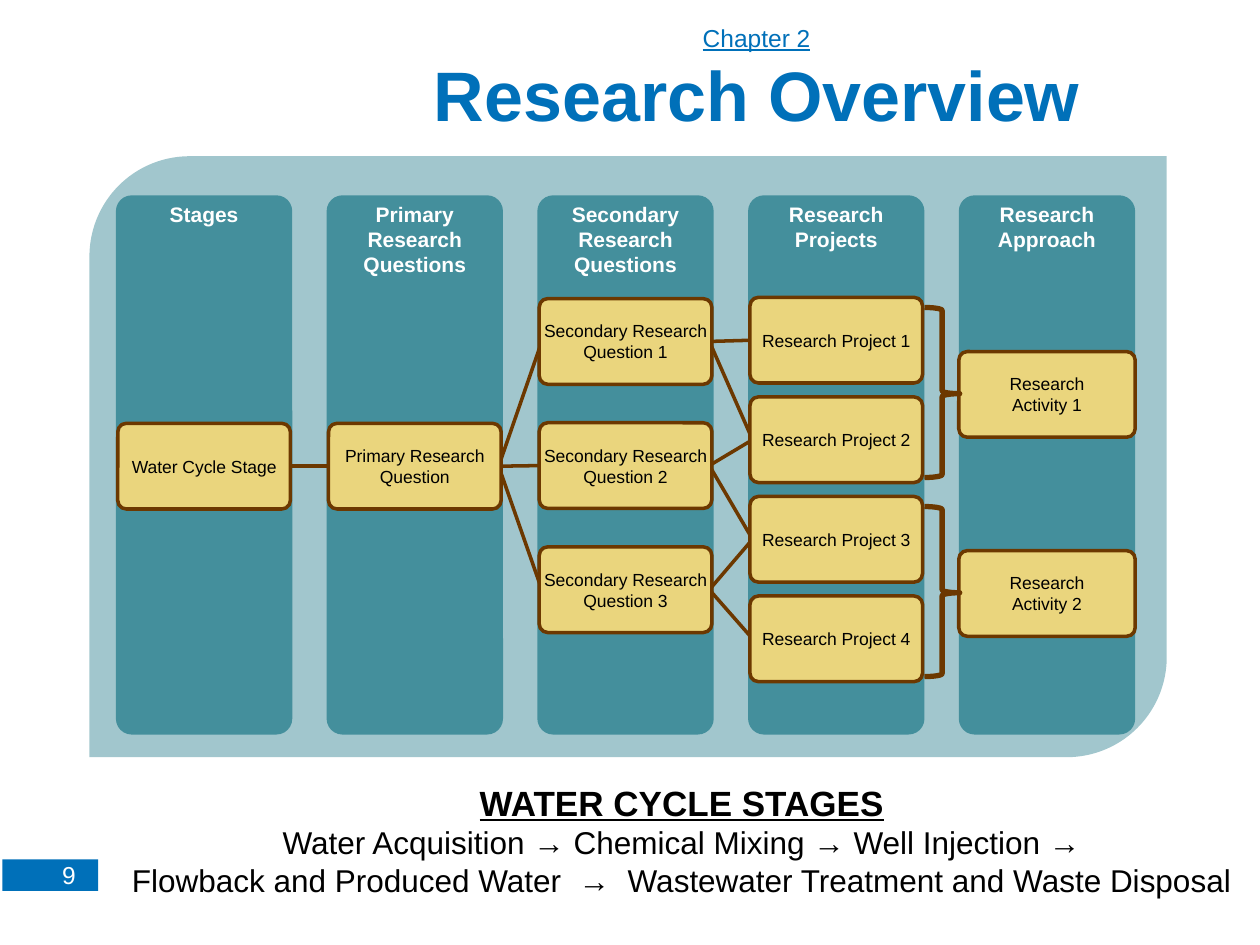
from pptx import Presentation
from pptx.dml.color import RGBColor
from pptx.enum.shapes import MSO_CONNECTOR, MSO_SHAPE
from pptx.enum.text import MSO_ANCHOR, PP_ALIGN
from pptx.oxml.ns import qn
from pptx.util import Inches, Pt
from lxml import etree

RECT, ROUND = MSO_SHAPE.RECTANGLE, MSO_SHAPE.ROUNDED_RECTANGLE
PANEL, BRACE = MSO_SHAPE.ROUND_2_DIAG_RECTANGLE, MSO_SHAPE.RIGHT_BRACE
LINE = MSO_CONNECTOR.STRAIGHT
TOP, MIDDLE = MSO_ANCHOR.TOP, MSO_ANCHOR.MIDDLE
CENTER, RIGHT = PP_ALIGN.CENTER, PP_ALIGN.RIGHT

BLUE, TEAL, SAND, BROWN = "0070B9", "448F9C", "EAD57D", "6C3800"
BLACK, WHITE = "000000", "FFFFFF"

CHAPTER = {"size": Pt(14), "color": BLUE, "underline": True}
TITLE = {"size": Pt(40), "color": BLUE, "bold": True}
HEAD = {"size": Pt(12), "color": WHITE, "bold": True}
LABEL = {"size": Pt(10), "color": BLACK}
NUMBER = {"size": Pt(14), "color": WHITE}
STAGES = {"size": Pt(20), "color": BLACK, "bold": True, "underline": True}
FLOW = {"size": Pt(18), "color": BLACK}

COL_W, BOX_W, BOX_H = 1.4, 1.37, 0.68
TUCK = 0.02  # how far a link runs under a box

HEADS = ["Stages", "Primary Research Questions", "Secondary Research Questions",
         "Research Projects", "Research Approach"]
# Boxes by column: tops relative to the panel, and their lines of text
BOXES = [
    [(2.12, ["Water Cycle Stage"])],
    [(2.12, ["Primary Research Question"])],
    [(1.13 + 0.985 * i, ["Secondary Research", f"Question {i + 1}"]) for i in range(3)],
    [(1.12 + 0.79 * i, [f"Research Project {i + 1}"]) for i in range(4)],
    [(1.55 + 1.58 * i, ["Research", f"Activity {i + 1}"]) for i in range(2)],
]
# Links: column of the left box, its row, row of the box in the next column
LINKS = [(0, 0, 0), (1, 0, 0), (1, 0, 1), (1, 0, 2), (2, 0, 0), (2, 0, 1),
         (2, 1, 1), (2, 1, 2), (2, 2, 2), (2, 2, 3)]


def rgb(code):
    return RGBColor.from_string(code)


def inches(box):
    return [Inches(v) for v in box]


def write(frame, lines, align=CENTER, anchor=TOP):
    """Put (text, format) lines into a frame, one paragraph each."""
    frame.word_wrap = True
    frame.vertical_anchor = anchor
    for i, (text, style) in enumerate(lines):
        para = frame.paragraphs[0] if i == 0 else frame.add_paragraph()
        para.alignment = align
        run = para.add_run()
        run.text = text
        run.font.name = "Arial"
        for key, value in style.items():
            if key == "color":
                run.font.color.rgb = rgb(value)
            else:
                setattr(run.font, key, value)


def add_text(slide, box, lines, align=CENTER):
    write(slide.shapes.add_textbox(*inches(box)).text_frame, lines, align)


def add_form(slide, kind, box, fill=None, line=None, width=2, adjust=()):
    form = slide.shapes.add_shape(kind, *inches(box))
    form.shadow.inherit = False
    for i, value in enumerate(adjust):
        form.adjustments[i] = value
    if fill:
        form.fill.solid()
        form.fill.fore_color.rgb = rgb(fill)
    else:
        form.fill.background()
    if line:
        form.line.color.rgb = rgb(line)
        form.line.width = Pt(width)
    else:
        form.line.fill.background()
    return form


def add_link(slide, start, end):
    link = slide.shapes.add_connector(LINE, *inches(start + end))
    link.line.color.rgb = rgb(BROWN)
    link.line.width = Pt(2)
    etree.SubElement(link._element.spPr, qn("a:effectLst"))


def add_box(slide, box, lines):
    form = add_form(slide, ROUND, box, SAND, BROWN, adjust=[0.1])
    frame = form.text_frame
    for side in ("left", "right", "top", "bottom"):
        setattr(frame, f"margin_{side}", 0)
    write(frame, [(text, LABEL) for text in lines], anchor=MIDDLE)


def add_diagram(slide, box):
    left, top, width, height = box
    # Half-transparent panel
    panel = add_form(slide, PANEL, box, TEAL)
    color = panel._element.spPr.find(qn("a:solidFill"))[0]
    etree.SubElement(color, qn("a:alpha"), val="50000")

    # Columns with headings
    first, last = left + 0.21, left + width - 0.25 - COL_W
    step = (last - first) / (len(HEADS) - 1)
    cols = [first + step * i for i in range(len(HEADS))]
    for x, head in zip(cols, HEADS):
        area = (x, top + 0.31, COL_W, height - 0.49)
        add_form(slide, ROUND, area, TEAL, adjust=[0.09])
        add_text(slide, (*area[:3], 0.73), [(head, HEAD)])

    # Links, drawn before the boxes that cover their ends
    edge = (COL_W - BOX_W) / 2
    for col, row, mate in LINKS:
        start = (cols[col] + edge + BOX_W - TUCK, top + BOXES[col][row][0] + BOX_H / 2)
        end = (cols[col + 1] + edge + TUCK, top + BOXES[col + 1][mate][0] + BOX_H / 2)
        add_link(slide, start, end)

    # Boxes; those of the last column fill its width
    for x, boxes in zip(cols, BOXES):
        wide = COL_W if x == cols[-1] else BOX_W
        for y, lines in boxes:
            add_box(slide, (x + (COL_W - wide) / 2, top + y, wide, BOX_H), lines)

    # Braces from projects to activities
    for y, _ in BOXES[-1]:
        area = (cols[3] + COL_W, top + y - 0.35, 0.28, 1.35)
        add_form(slide, BRACE, area, line=BROWN, width=3, adjust=[0.083, 0.507])


def add_title(slide, box):
    add_text(slide, box, [("Chapter 2", CHAPTER), ("Research Overview", TITLE)])


def add_number(slide, box):
    left, top, width, height = box
    add_form(slide, RECT, box, BLUE)
    add_text(slide, (left - 0.02, top - 0.04, width - 0.06, height + 0.03),
             [("9", NUMBER)], RIGHT)


def add_stages(slide, box):
    add_text(slide, box, [
        ("WATER CYCLE STAGES", STAGES),
        ("Water Acquisition → Chemical Mixing → Well Injection →", FLOW),
        ("Flowback and Produced Water  →  Wastewater Treatment and Waste Disposal", FLOW),
    ])


def main():
    deck = Presentation()
    deck.slide_width, deck.slide_height = Inches(10), Inches(7.5)
    slide = deck.slides.add_slide(deck.slide_layouts[6])
    add_number(slide, (0.02, 6.82, 0.76, 0.25))
    add_title(slide, (2.47, 0.13, 7.07, 1.01))
    add_diagram(slide, (0.71, 1.24, 8.55, 4.77))
    add_stages(slide, (0.92, 6.15, 8.98, 1.04))
    deck.save("out.pptx")


if __name__ == "__main__":
    main()
